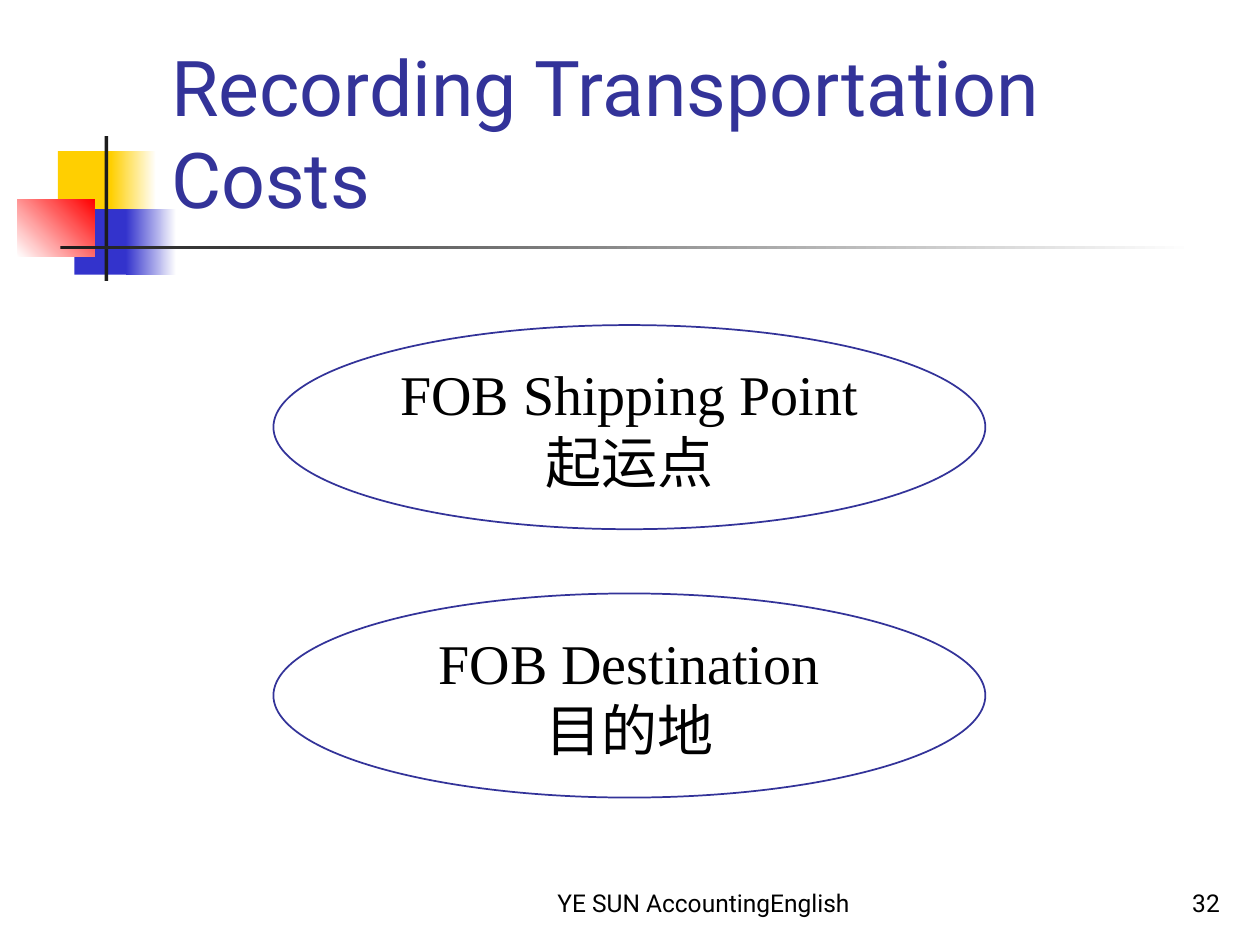
from dataclasses import dataclass

from pptx import Presentation
from pptx.dml.color import RGBColor
from pptx.enum.shapes import MSO_SHAPE
from pptx.enum.text import MSO_ANCHOR, MSO_AUTO_SIZE, PP_ALIGN
from pptx.util import Inches, Pt

RECT, OVAL = MSO_SHAPE.RECTANGLE, MSO_SHAPE.OVAL
LEFT, MID, RIGHT = PP_ALIGN.LEFT, PP_ALIGN.CENTER, PP_ALIGN.RIGHT
BASE, CORE = MSO_ANCHOR.BOTTOM, MSO_ANCHOR.MIDDLE
NO_FIT = MSO_AUTO_SIZE.NONE

COLORS = {
    "gold": "FFCF01", "blue": "3333CC", "red": "FF0000",
    "ink": "1C1C1C", "navy": "333399", "black": "000000", "white": "FFFFFF",
}
SANS, SERIF = "Roboto", "Times New Roman"
WIDE, HIGH = Inches(10), Inches(7.5)


@dataclass
class Box:
    """Percent shares of the slide's width and height."""
    x: float
    y: float
    w: float
    h: float

    def place(self) -> tuple[int, int, int, int]:
        return (int(WIDE * self.x / 100), int(HIGH * self.y / 100),
                int(WIDE * self.w / 100), int(HIGH * self.h / 100))


@dataclass
class Block:
    box: Box
    tint: str
    fade: str = ""
    angle: float = 0


@dataclass
class Style:
    font: str
    size: int
    tint: str
    align: PP_ALIGN
    anchor: MSO_ANCHOR


def rgb(name: str) -> RGBColor:
    return RGBColor.from_string(COLORS[name])


def write(shape, lines: list[str], style: Style) -> None:
    frame = shape.text_frame
    frame.word_wrap = True
    frame.auto_size = NO_FIT
    frame.vertical_anchor = style.anchor
    for i, line in enumerate(lines):
        para = frame.add_paragraph() if i else frame.paragraphs[0]
        para.alignment = style.align
        run = para.add_run()
        run.text = line
        run.font.name = style.font
        run.font.size = Pt(style.size)
        run.font.color.rgb = rgb(style.tint)


def draw_block(slide, block: Block) -> None:
    shape = slide.shapes.add_shape(RECT, *block.box.place())
    shape.shadow.inherit = False
    shape.line.fill.background()
    if block.fade:
        shape.fill.gradient()
        shape.fill.gradient_angle = block.angle
        for stop, name in zip(shape.fill.gradient_stops, (block.tint, block.fade)):
            stop.color.rgb = rgb(name)
    else:
        shape.fill.solid()
        shape.fill.fore_color.rgb = rgb(block.tint)


def draw_oval(slide, box: Box, lines: list[str]) -> None:
    shape = slide.shapes.add_shape(OVAL, *box.place())
    shape.shadow.inherit = False
    shape.fill.background()
    shape.line.color.rgb = rgb("navy")
    shape.line.width = Pt(1)
    write(shape, lines, Style(SERIF, 32, "black", MID, CORE))


def draw_note(slide, box: Box, text: str, align: PP_ALIGN) -> None:
    shape = slide.shapes.add_textbox(*box.place())
    write(shape, [text], Style(SANS, 14, "black", align, BASE))


BLOCKS = [
    Block(Box(4.6, 16, 4.8, 6.93), "gold"),
    Block(Box(8.8, 16, 3.6, 6.93), "gold", "white"),
    Block(Box(5.9, 22.13, 4.6, 6.93), "blue"),
    Block(Box(10, 22.13, 4, 6.93), "blue", "white"),
    Block(Box(1.4, 21.07, 6.1, 6.13), "white", "red", 45),
    Block(Box(8.3, 14.4, 0.3, 15.33), "ink"),
    Block(Box(4.8, 26, 90, 0.4), "ink", "white"),
]
TERMS = [
    ["FOB Shipping Point", "起运点"],
    ["FOB Destination", "目的地"],
]
TOP, STEP = 34.4, 28.4


def main() -> None:
    deck = Presentation()
    deck.slide_width, deck.slide_height = WIDE, HIGH
    slide = deck.slides.add_slide(deck.slide_layouts[5])

    # Corner blocks and rules
    for block in BLOCKS:
        draw_block(slide, block)

    # Title
    title = slide.shapes.title
    title.left, title.top, title.width, title.height = Box(12.6, 3.07, 85.2, 21.33).place()
    write(title, ["Recording Transportation Costs"], Style(SANS, 44, "navy", LEFT, BASE))

    # Shipping terms
    for i, lines in enumerate(TERMS):
        draw_oval(slide, Box(21.7, TOP + i * STEP, 56.5, 21.6), lines)

    # Footer
    draw_note(slide, Box(40, 91.07, 31.7, 6.67), "YE SUN AccountingEnglish", MID)
    draw_note(slide, Box(77, 91.07, 20.8, 6.67), "32", RIGHT)

    deck.save("out.pptx")


if __name__ == "__main__":
    main()
